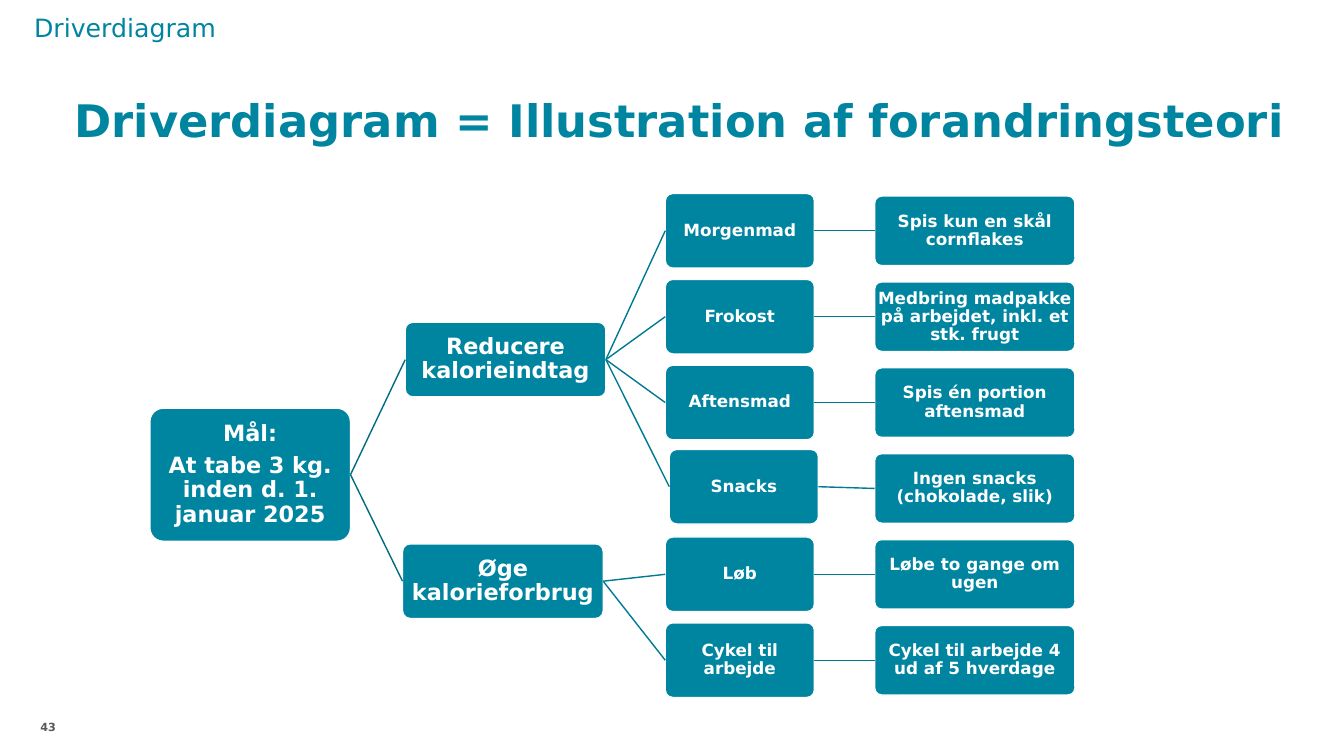
from collections import namedtuple

from lxml import etree
from pptx import Presentation
from pptx.dml.color import RGBColor
from pptx.enum.shapes import MSO_CONNECTOR, MSO_SHAPE
from pptx.enum.text import MSO_ANCHOR, PP_ALIGN
from pptx.oxml.ns import qn
from pptx.util import Inches, Pt

LEFT, CENTER, RIGHT = PP_ALIGN.LEFT, PP_ALIGN.CENTER, PP_ALIGN.RIGHT
TOP, MIDDLE, BOTTOM = MSO_ANCHOR.TOP, MSO_ANCHOR.MIDDLE, MSO_ANCHOR.BOTTOM
ROUNDED, STRAIGHT = MSO_SHAPE.ROUNDED_RECTANGLE, MSO_CONNECTOR.STRAIGHT
LEFT_SITE, RIGHT_SITE = 1, 3

# Lengths are percent of the slide's width or height
FIRST_ROW, ROW_STEP = 30.53, 11.36
Level = namedtuple("Level", "left width height size link")
LEVELS = [
    Level(11.15, 14.93, 17.6, 16, None),
    Level(30.15, 14.93, 9.87, 16, "006B81"),
    Level(49.5, 11.1, 9.87, 12, "007992"),
    Level(65.08, 14.9, 9.2, 12, "007992"),
]

# Each node: text, row, shift to the right, children
Node = namedtuple("Node", "text row shift children", defaults=(0, ()))


def branch(area, action, row, shift=0):
    return Node(area, row, shift, [Node(action, round(row))])


GOAL = Node("Mål:\nAt tabe 3 kg. inden d. 1. januar 2025", 2.84, 0, [
    Node("Reducere kalorieindtag", 1.5, 0, [
        branch("Morgenmad", "Spis kun en skål cornflakes", 0),
        branch("Frokost", "Medbring madpakke på arbejdet, inkl. et stk. frugt", 1),
        branch("Aftensmad", "Spis én portion aftensmad", 2),
        branch("Snacks", "Ingen snacks (chokolade, slik)", 2.98, 0.3),
    ]),
    Node("Øge kalorieforbrug", 4.08, -0.2, [
        branch("Løb", "Løbe to gange om ugen", 4),
        branch("Cykel til arbejde", "Cykel til arbejde 4 ud af 5 hverdage", 5),
    ]),
])


def rgb(value):
    return RGBColor.from_string(value)


def write(tf, text, size, color, bold=True, align=LEFT, anchor=TOP,
          spacing=1.0, after=0, inset=(0, 0)):
    tf.word_wrap = True
    tf.vertical_anchor = anchor
    tf.margin_left = tf.margin_right = Inches(inset[0])
    tf.margin_top = tf.margin_bottom = Inches(inset[1])
    for i, line in enumerate(text.split("\n")):
        p = tf.add_paragraph() if i else tf.paragraphs[0]
        p.alignment, p.line_spacing, p.space_after = align, spacing, Pt(after)
        r = p.add_run()
        r.text = line
        r.font.name, r.font.size, r.font.bold = "DejaVu Sans", Pt(size), bold
        r.font.color.rgb = rgb(color)


class Deck:
    teal, white, grey = "0085A1", "FFFFFF", "595959"

    def __init__(self):
        self.prs = Presentation()
        self.prs.slide_width, self.prs.slide_height = Inches(13.33), Inches(7.5)
        self.s = self.prs.slides.add_slide(self.prs.slide_layouts[6])

    def box(self, left, top, width, height):
        w, h = self.prs.slide_width, self.prs.slide_height
        return [round(share * side / 100) for share, side in
                ((left, w), (top, h), (width, w), (height, h))]

    def label(self, text, place, **style):
        sp = self.s.shapes.add_textbox(*self.box(*place))
        write(sp.text_frame, text, **style)

    def node(self, node, level):
        middle = FIRST_ROW + node.row * ROW_STEP
        place = self.box(level.left + node.shift, middle - level.height / 2,
                         level.width, level.height)
        sp = self.s.shapes.add_shape(ROUNDED, *place)
        sp.adjustments[0] = 0.1
        sp.shadow.inherit = False
        sp.fill.solid()
        sp.fill.fore_color.rgb = rgb(self.teal)
        sp.line.color.rgb = rgb(self.white)
        sp.line.width = Pt(1)
        # The rounded corners already hold the text off the edges
        write(sp.text_frame, node.text, level.size, self.white, align=CENTER,
              anchor=MIDDLE, spacing=0.9, after=0.35 * level.size)
        return sp

    def link(self, parent, child, color):
        line = self.s.shapes.add_connector(STRAIGHT, 0, 0, 0, 0)
        line.begin_connect(parent, RIGHT_SITE)
        line.end_connect(child, LEFT_SITE)
        line.line.color.rgb = rgb(color)
        line.line.width = Pt(1)
        etree.SubElement(line._element.spPr, qn("a:effectLst"))

    def tree(self, node, depth=0):
        sp = self.node(node, LEVELS[depth])
        for child in node.children:
            self.link(sp, self.tree(child, depth + 1), LEVELS[depth + 1].link)
        return sp


def main():
    deck = Deck()

    # Headings
    deck.label("Driverdiagram = Illustration af forandringsteori",
               (5.55, 3.7, 93.8, 15.73), size=32, color=deck.teal,
               anchor=BOTTOM, spacing=0.9)
    deck.label("Driverdiagram", (1.8, 0.93, 50, 5.33), size=18,
               color="0085A0", bold=False, after=6, inset=(0.1, 0.05))

    # Driver diagram, from goal to actions
    deck.tree(GOAL)

    # Page number
    deck.label("43", (1.2, 95.33, 2.97, 4.67), size=8, color=deck.grey,
               align=RIGHT)

    deck.prs.save("out.pptx")


if __name__ == "__main__":
    main()
